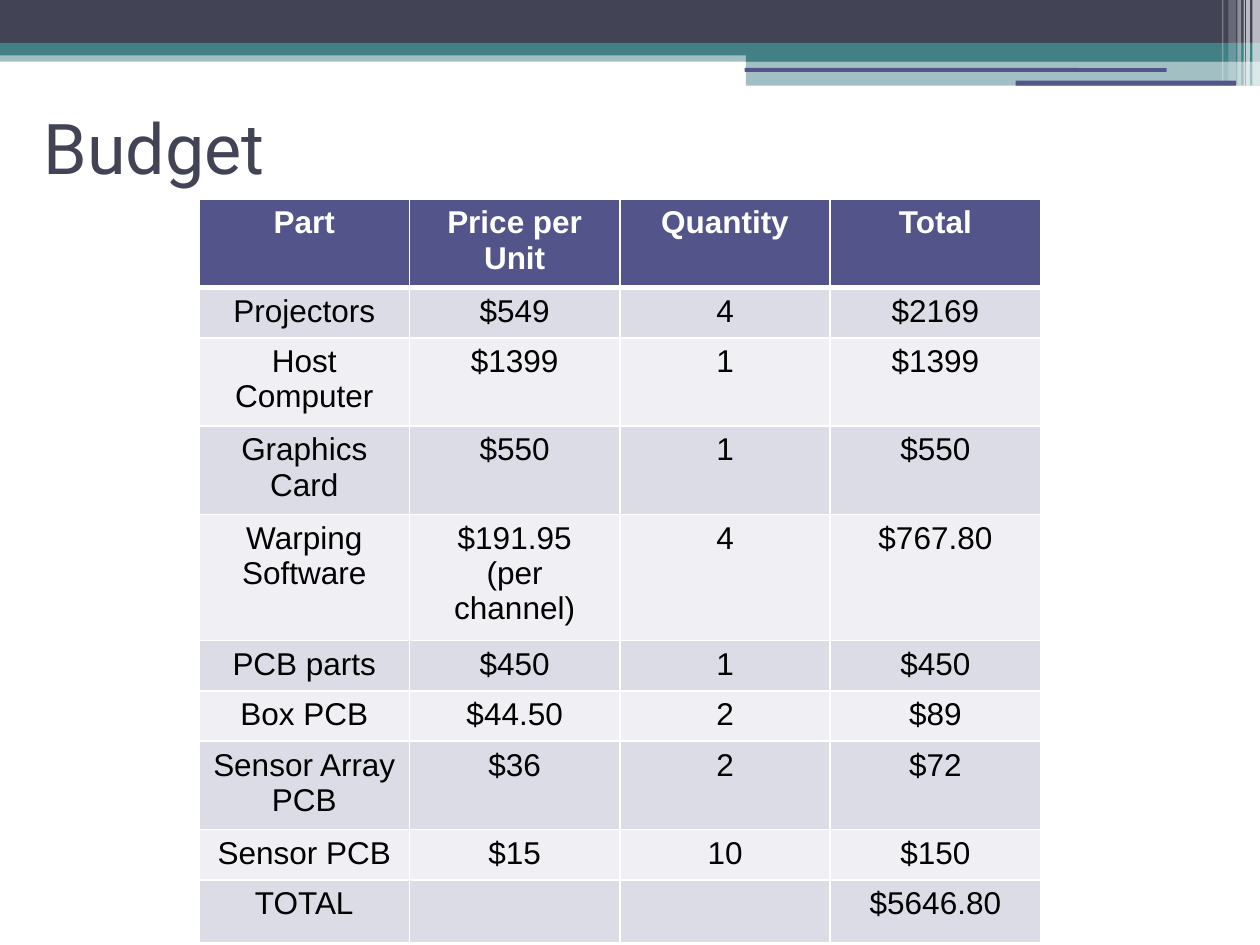
from lxml import etree
from pptx import Presentation
from pptx import util as u
from pptx.dml.color import RGBColor
from pptx.enum import shapes, text
from pptx.oxml.ns import qn

COLORS = {
    "slate": "424456", "teal": "438086", "indigo": "53548A", "white": "FFFFFF",
    "black": "000000", "band_dark": "DCDCE7", "band_light": "EFEFF4",
}

# Header bands: left, top, width, height, colour, opacity in percent
BANDS = [
    (0, 0.4, 10, 0.09, "teal", 49),
    (0, 0, 10, 0.34, "slate", 100),
    (0, 0.34, 10, 0.1, "teal", 100),
    (5.92, 0.39, 4.08, 0.1, "teal", 100),
    (5.92, 0.48, 4.08, 0.2, "teal", 49),
]
# Rounded accent bars: left, top, width, height
ACCENTS = [(5.91, 0.54, 3.35, 0.03), (8.06, 0.64, 1.75, 0.04)]
# Pale stripes at the right: left, width, height, opacity in percent
STRIPES = [
    (9.94, 0.06, 0.68, 64), (9.89, 0.03, 0.68, 64), (9.87, 0.01, 0.68, 60),
    (9.82, 0.03, 0.68, 40), (9.75, 0.06, 0.64, 20), (9.7, 0.01, 0.64, 29),
]

TITLE = "Budget"
# Each row: height, then its four cells
BUDGET = [
    (0.69, "Part", "Price per Unit", "Quantity", "Total"),
    (0.4, "Projectors", "$549", "4", "$2169"),
    (0.7, "Host Computer", "$1399", "1", "$1399"),
    (0.7, "Graphics Card", "$550", "1", "$550"),
    (1, "Warping Software", "$191.95\n(per channel)", "4", "$767.80"),
    (0.4, "PCB parts", "$450", "1", "$450"),
    (0.4, "Box PCB", "$44.50", "2", "$89"),
    (0.7, "Sensor Array PCB", "$36", "2", "$72"),
    (0.4, "Sensor PCB", "$15", "10", "$150"),
    (0.5, "TOTAL", "", "", "$5646.80"),
]
TABLE_LEFT, TABLE_TOP, COLUMN_WIDTH = 1.58, 1.58, 1.67


def color(name):
    return RGBColor.from_string(COLORS[name])


def add_bar(page, left, top, width, height, fill, opacity=100,
            kind=shapes.MSO_SHAPE.RECTANGLE):
    bar = page.shapes.add_shape(kind, *map(u.Inches, (left, top, width, height)))
    bar.shadow.inherit = False
    bar.line.fill.background()
    bar.fill.solid()
    bar.fill.fore_color.rgb = color(fill)
    if opacity < 100:
        tint = bar.fill._xPr.find(qn("a:solidFill"))[0]
        etree.SubElement(tint, qn("a:alpha"), val=str(opacity * 1000))
    return bar


def write(frame, words, size=18, font="Arial", fill="black", bold=False,
          align=text.PP_ALIGN.CENTER):
    for index, line in enumerate(words.split("\n")):
        para = frame.add_paragraph() if index else frame.paragraphs[0]
        para.alignment = align
        para.font.size = u.Pt(size)
        if not line:
            continue
        span = para.add_run()
        span.text = line
        span.font.size = u.Pt(size)
        span.font.name = font
        span.font.bold = bold
        span.font.color.rgb = color(fill)


def set_borders(cell, **widths):
    """Draw white borders; widths in points by side: L, R, T, B."""
    props = cell._tc.get_or_add_tcPr()
    for side in "LRTB":
        line = etree.SubElement(props, qn(f"a:ln{side}"),
                                w=str(u.Pt(widths.get(side, 1))))
        solid = etree.SubElement(line, qn("a:solidFill"))
        etree.SubElement(solid, qn("a:srgbClr"), val=COLORS["white"])


def add_budget_table(page):
    columns = len(BUDGET[0]) - 1
    total_height = sum(row[0] for row in BUDGET)
    table = page.shapes.add_table(
        len(BUDGET), columns, u.Inches(TABLE_LEFT), u.Inches(TABLE_TOP),
        u.Inches(COLUMN_WIDTH * columns), u.Inches(total_height)).table
    for column in table.columns:
        column.width = u.Inches(COLUMN_WIDTH)
    for r, (height, *entries) in enumerate(BUDGET):
        table.rows[r].height = u.Inches(height)
        header = r == 0
        band = "indigo" if header else ("band_dark" if r % 2 else "band_light")
        for c, entry in enumerate(entries):
            cell = table.cell(r, c)
            set_borders(cell, T=3 if r == 1 else 1, B=3 if header else 1)
            cell.fill.solid()
            cell.fill.fore_color.rgb = color(band)
            write(cell.text_frame, entry, bold=header,
                  fill="white" if header else "black")


def main():
    deck = Presentation()
    deck.slide_width, deck.slide_height = u.Inches(10), u.Inches(7.5)
    page = deck.slides.add_slide(deck.slide_layouts[6])

    # Header decoration
    for band in BANDS:
        add_bar(page, *band)
    for accent in ACCENTS:
        add_bar(page, *accent, "indigo", kind=shapes.MSO_SHAPE.ROUNDED_RECTANGLE)
    for left, width, height, opacity in STRIPES:
        add_bar(page, left, 0, width, height, "white", opacity)

    # Title
    box = page.shapes.add_textbox(*map(u.Inches, (0.25, 0.73, 9, 0.87)))
    frame = box.text_frame
    frame.word_wrap = True
    frame.vertical_anchor = text.MSO_ANCHOR.MIDDLE
    frame.margin_left = frame.margin_right = u.Inches(0.1)
    frame.margin_top = frame.margin_bottom = u.Inches(0.1)
    write(frame, TITLE, size=40, font="Roboto", fill="slate",
          align=text.PP_ALIGN.LEFT)

    # Budget table
    add_budget_table(page)

    deck.save("out.pptx")


if __name__ == "__main__":
    main()
